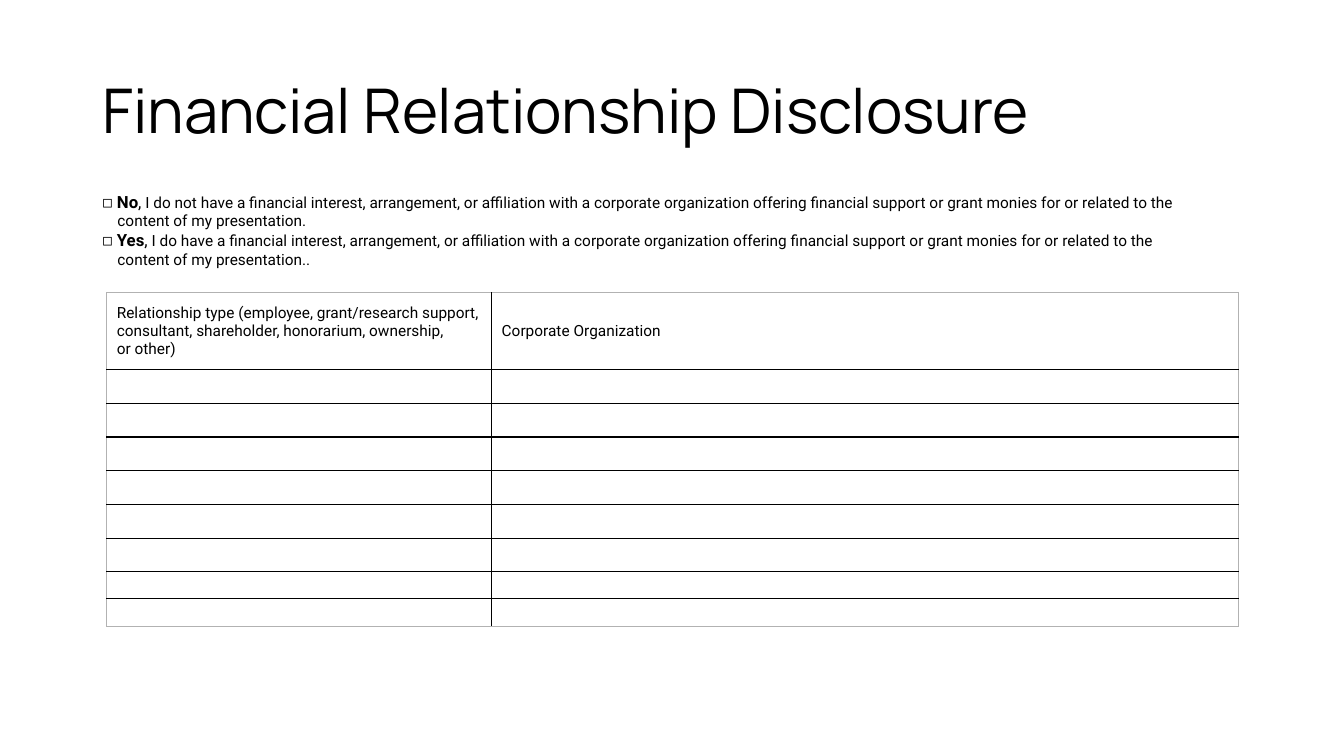
from lxml.etree import SubElement
from pptx import Presentation
from pptx.dml.color import RGBColor
from pptx.enum.text import MSO_ANCHOR as Anchor
from pptx.oxml.ns import qn
from pptx.util import Cm, Pt

BLACK, GREY = "000000", "B2B2B2"
INTERESTS = (" have a financial interest, arrangement, or affiliation with a corporate "
             "organization offering financial support or grant monies for or related to the")
ANSWERS = [
    ("No", " I do not" + INTERESTS, "content of my presentation."),
    ("Yes", " I do" + INTERESTS, "content of my presentation.."),
]
HEADINGS = [
    "Relationship type (employee, grant/research support, consultant, "
    "shareholder, honorarium, ownership,\vor other)",
    "Corporate Organization",
]
COLUMN_WIDTHS = [9.7, 18.82]
ROW_HEIGHTS = [1.94] + [0.85] * 6 + [0.68] * 2


def color(hex_string):
    return RGBColor.from_string(hex_string)


def style(para, name, size):
    para.font.name = name
    para.font.size = Pt(size)
    para.font.color.rgb = color(BLACK)


def add_text_frame(page, left, top, width, height, anchor):
    box = page.shapes.add_textbox(Cm(left), Cm(top), Cm(width), Cm(height))
    frame = box.text_frame
    frame.word_wrap = True
    frame.vertical_anchor = anchor
    return frame


def add_title(page, text):
    frame = add_text_frame(page, 2.33, 1.01, 29.21, 3.68, Anchor.MIDDLE)
    para = frame.paragraphs[0]
    para.text = text
    para.line_spacing = 0.9
    style(para, "Manrope", 44)


def add_span(para, text, size, bold=False):
    span = para.add_run()
    span.text = text
    span.font.size = Pt(size)
    span.font.bold = bold


def add_answers(page):
    frame = add_text_frame(page, 2.33, 4.7, 27.74, 2.24, Anchor.TOP)
    for index, (answer, statement, ending) in enumerate(ANSWERS):
        para = frame.add_paragraph() if index else frame.paragraphs[0]
        # Hanging indent aligns the second line with the answer
        properties = para._p.get_or_add_pPr()
        properties.set("marL", str(Cm(0.38)))
        properties.set("indent", str(-Cm(0.38)))
        style(para, "Roboto", 12)
        add_span(para, "◻︎ ", 12)
        add_span(para, answer, 12, bold=True)
        add_span(para, ",", 12)
        add_span(para, statement, 11)
        para.add_line_break()
        add_span(para, ending, 11)


def set_borders(cell, edges):
    properties = cell._tc.get_or_add_tcPr()
    for position, (side, outer) in enumerate(edges.items()):
        line = SubElement(properties, qn(f"a:{side}"), w=str(Pt(0.5 if outer else 1)))
        fill = SubElement(line, qn("a:solidFill"))
        SubElement(fill, qn("a:srgbClr"), val=GREY if outer else BLACK)
        properties.remove(line)
        properties.insert(position, line)


def add_disclosure_table(page):
    rows, columns = len(ROW_HEIGHTS), len(COLUMN_WIDTHS)
    table = page.shapes.add_table(rows, columns, Cm(2.69), Cm(7.37),
                                  Cm(sum(COLUMN_WIDTHS)), Cm(sum(ROW_HEIGHTS))).table
    table.first_row = table.horz_banding = False
    for column, width in zip(table.columns, COLUMN_WIDTHS):
        column.width = Cm(width)
    for row_index, (row, height) in enumerate(zip(table.rows, ROW_HEIGHTS)):
        row.height = Cm(height)
        for column_index, cell in enumerate(row.cells):
            cell.fill.background()
            cell.vertical_anchor = Anchor.MIDDLE
            set_borders(cell, {
                "lnL": column_index == 0,
                "lnR": column_index == columns - 1,
                "lnT": row_index == 0,
                "lnB": row_index == rows - 1,
            })
            para = cell.text_frame.paragraphs[0]
            if row_index == 0:
                para.text = HEADINGS[column_index]
                style(para, "Roboto", 11)
            else:
                # Small end mark keeps the empty rows low
                SubElement(para._p, qn("a:endParaRPr"), sz="1000")


def main():
    deck = Presentation()
    deck.slide_width, deck.slide_height = Cm(33.87), Cm(19.05)
    page = deck.slides.add_slide(deck.slide_layouts[6])
    add_title(page, "Financial Relationship Disclosure")
    add_answers(page)
    add_disclosure_table(page)
    deck.save("out.pptx")


if __name__ == "__main__":
    main()
